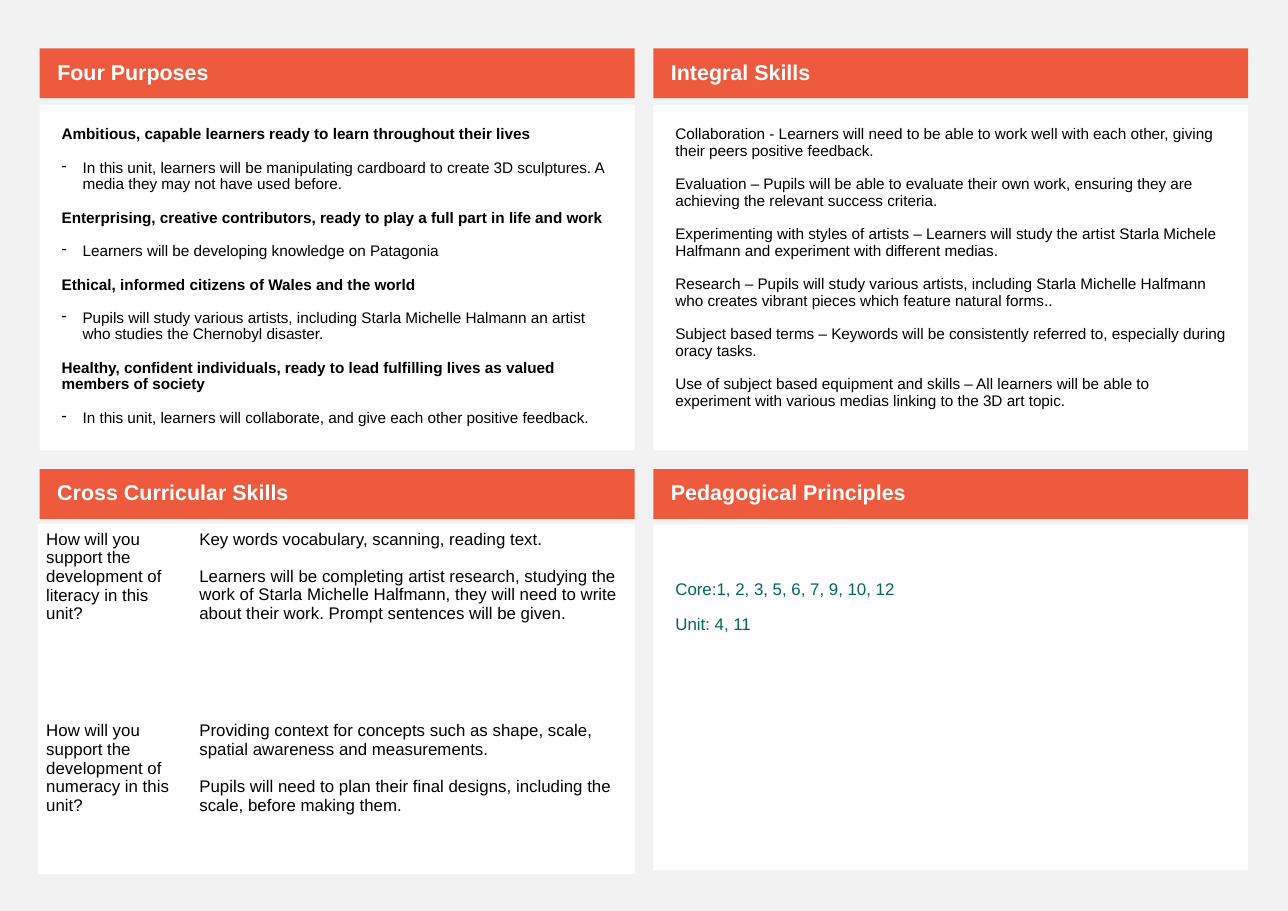
"""Build a unit overview slide with four headed panels."""
from lxml.etree import SubElement
from pptx import Presentation
from pptx.dml.color import RGBColor
from pptx.enum.shapes import MSO_SHAPE
from pptx.enum.text import MSO_ANCHOR, MSO_AUTO_SIZE, PP_ALIGN
from pptx.oxml.ns import qn
from pptx.util import Inches, Pt

COLORS = {"page": "F2F2F2", "head": "ED5A3E", "panel": "FFFFFF",
          "light": "FFFFFF", "text": "000000", "green": "006758"}
LEFTS = (0.36, 5.93)
TOPS = (0.44, 4.26)
WIDTH, HEAD, BODY = 5.4, 0.45, 3.14
BODY_TOPS = (0.95, 4.76)

HEADS = [("Four Purposes", 0, 0), ("Integral Skills", 1, 0),
         ("Cross Curricular Skills", 0, 1), ("Pedagogical Principles", 1, 1)]
AIMS = [
    ("Ambitious, capable learners ready to learn throughout their lives",
     "In this unit, learners will be manipulating cardboard to create 3D sculptures. A media they may not have used before."),
    ("Enterprising, creative contributors, ready to play a full part in life and work",
     "Learners will be developing knowledge on Patagonia"),
    ("Ethical, informed citizens of Wales and the world",
     "Pupils will study various artists, including Starla Michelle Halmann an artist who studies the Chernobyl disaster."),
    ("Healthy, confident individuals, ready to lead fulfilling lives as valued members of society",
     "In this unit, learners will collaborate, and give each other positive feedback."),
]
SKILLS = [
    "Collaboration - Learners will need to be able to work well with each other, giving their peers positive feedback.",
    "Evaluation – Pupils will be able to evaluate their own work, ensuring they are achieving the relevant success criteria.",
    "Experimenting with styles of artists – Learners will study the artist Starla Michele Halfmann and experiment with different medias.",
    "Research – Pupils will study various artists, including Starla Michelle Halfmann who creates vibrant pieces which feature natural forms..",
    "Subject based terms – Keywords will be consistently referred to, especially during oracy tasks.",
    "Use of subject based equipment and skills – All learners will be able to experiment with various medias linking to the 3D art topic.",
]
CODES = ["Core:1, 2, 3, 5, 6, 7, 9, 10, 12", "Unit: 4, 11"]
CROSS = [
    (["How will you support the development of literacy in this unit?"],
     ["Key words vocabulary, scanning, reading text.",
      "Learners will be completing artist research, studying the work of Starla Michelle Halfmann, they will need to write about their work. Prompt sentences will be given."]),
    (["How will you support the development of numeracy in this unit?"],
     ["Providing context for concepts such as shape, scale, spatial awareness and measurements.",
      "Pupils will need to plan their final designs, including the scale, before making them."]),
]


def write(frame, lines, size, color, gap=11, line=0.9, bold=False):
    frame.text = "\n".join(lines)
    frame.word_wrap = True
    for para in frame.paragraphs:
        para.alignment = PP_ALIGN.LEFT
        para.line_spacing = line
        para.space_before = Pt(gap)
        for run in para.runs:
            run.font.name = "Arial"
            run.font.size = Pt(size)
            run.font.bold = bold
            run.font.color.rgb = RGBColor.from_string(COLORS[color])


def style(shape, fill, anchor, insets):
    shape.fill.solid()
    shape.fill.fore_color.rgb = RGBColor.from_string(COLORS[fill])
    shape.line.fill.background()
    shape.shadow.inherit = False
    frame = shape.text_frame
    frame.auto_size = MSO_AUTO_SIZE.NONE
    frame.vertical_anchor = anchor
    (frame.margin_left, frame.margin_top,
     frame.margin_right, frame.margin_bottom) = map(Inches, insets)


deck = Presentation()
deck.slide_width, deck.slide_height = Inches(11.69), Inches(8.27)
slide = deck.slides.add_slide(deck.slide_layouts[5])
slide.background.fill.solid()
slide.background.fill.fore_color.rgb = RGBColor.from_string(COLORS["page"])

for text, col, row in HEADS:
    box = [Inches(n) for n in (LEFTS[col], TOPS[row], WIDTH, HEAD)]
    if (col, row) == (0, 0):
        head = slide.shapes.title
        head.left, head.top, head.width, head.height = box
    else:
        head = slide.shapes.add_shape(MSO_SHAPE.RECTANGLE, *box)
    style(head, "head", MSO_ANCHOR.MIDDLE, (0.16, 0.05, 0.1, 0.05))
    write(head.text_frame, [text], 14, "light", bold=True)

aims = [text for pair in AIMS for text in pair]
PANELS = [(aims, 0, 0, 10, "text", 0.2), (SKILLS, 1, 0, 10, "text", 0.2),
          (CODES, 1, 1, 11, "green", 0.51)]
for lines, col, row, size, color, inset in PANELS:
    panel = slide.shapes.add_shape(
        MSO_SHAPE.RECTANGLE, Inches(LEFTS[col]), Inches(BODY_TOPS[row]),
        Inches(WIDTH), Inches(BODY))
    style(panel, "panel", MSO_ANCHOR.TOP, (0.2, inset, 0.2, 0.2))
    write(panel.text_frame, lines, size, color)
    if lines is aims:
        paras = panel.text_frame.paragraphs
        for para in paras[::2]:
            para.runs[0].font.bold = True
        for para in paras[1::2]:
            props = para._p.get_or_add_pPr()
            props.set("marL", str(Inches(0.19)))
            props.set("indent", str(-Inches(0.19)))
            SubElement(props, qn("a:buChar")).set("char", "-")

table = slide.shapes.add_table(2, 2, Inches(0.35), Inches(4.76),
                               Inches(5.41), Inches(3.17)).table
table.first_row = table.horz_banding = False
for col, width in zip(table.columns, (1.39, 4.02)):
    col.width = Inches(width)
for row, height, cells in zip(table.rows, (1.74, 1.43), CROSS):
    row.height = Inches(height)
    for cell, lines in zip(row.cells, cells):
        cell.fill.solid()
        cell.fill.fore_color.rgb = RGBColor.from_string(COLORS["panel"])
        cell.margin_left = cell.margin_right = Inches(0.07)
        cell.margin_top = cell.margin_bottom = Inches(0.05)
        write(cell.text_frame, lines, 11, "text", gap=12, line=1.0)
        cell.text_frame.paragraphs[0].space_before = Pt(0)

deck.save("out.pptx")
